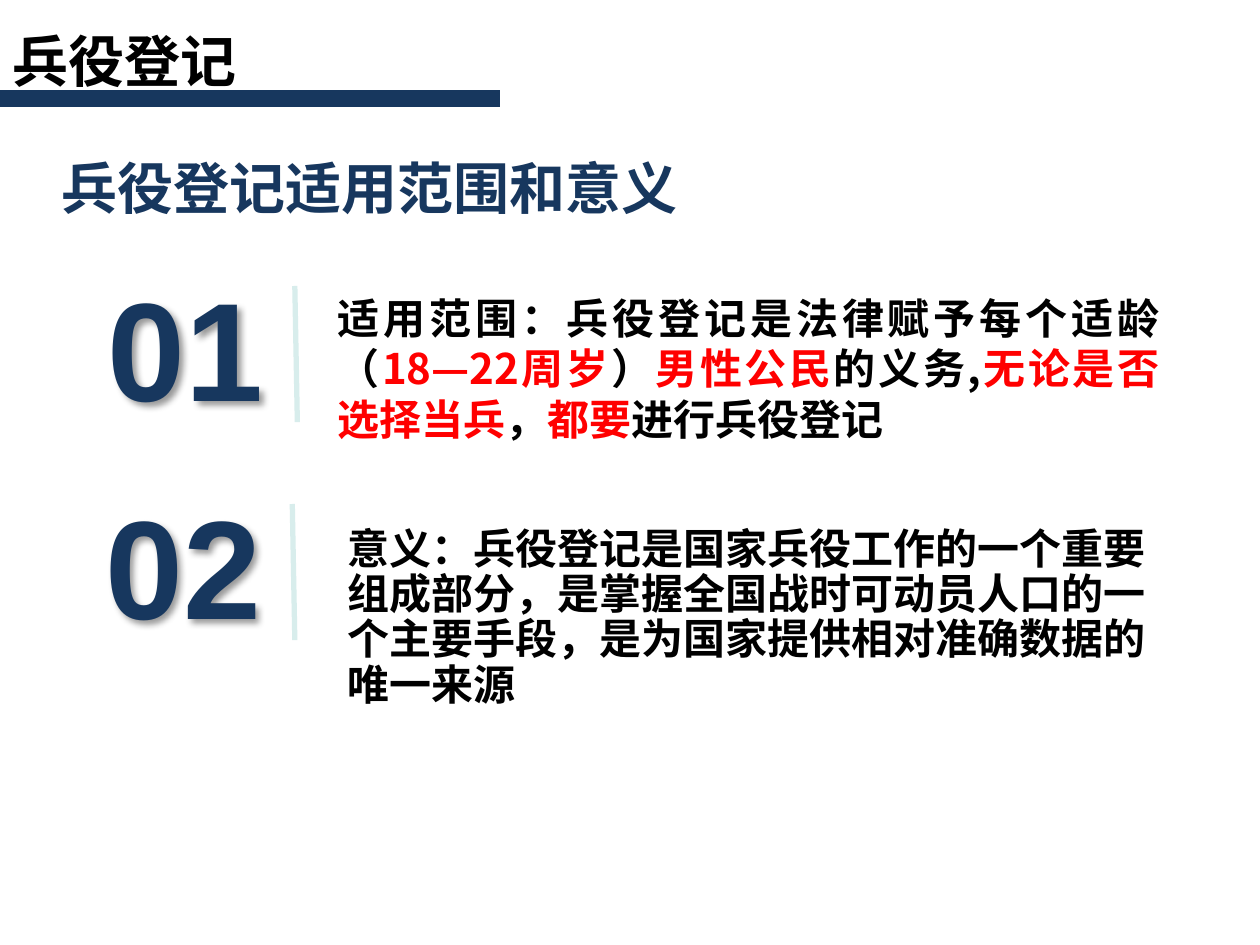
from lxml import etree
from pptx import Presentation
from pptx import util as u
from pptx.dml.color import RGBColor
from pptx.enum import shapes, text
from pptx.oxml import ns

WIDTH, HEIGHT = u.Inches(10), u.Inches(7.5)
NAVY = RGBColor(0x17, 0x37, 0x5E)
MINT = RGBColor(0xD8, 0xED, 0xEC)
BLACK = RGBColor(0, 0, 0)
RED = RGBColor(0xFF, 0, 0)
CHINESE_FONT = "Noto Sans CJK SC"
NUMBER_FONT = "Arial"

SCOPE_RUNS = [
    ("适用范围：兵役登记是法律赋予每个适龄（", BLACK),
    ("18—22周岁", RED),
    ("）", BLACK),
    ("男性公民", RED),
    ("的义务,", BLACK),
    ("无论是否选择当兵", RED),
    ("，", BLACK),
    ("都要", RED),
    ("进行兵役登记", BLACK),
]
MEANING_RUNS = [
    ("意义：兵役登记是国家兵役工作的一个重要组成部分，"
     "是掌握全国战时可动员人口的一个主要手段，"
     "是为国家提供相对准确数据的唯一来源", BLACK),
]


def add_run(paragraph, content, size, color, font_name):
    run = paragraph.add_run()
    run.text = content
    font = run.font
    font.size, font.bold, font.name = u.Pt(size), True, font_name
    font.color.rgb = color
    latin = run._r.rPr.find(ns.qn("a:latin"))
    east_asian = etree.Element(ns.qn("a:ea"), typeface=font_name)
    latin.addnext(east_asian)


def write_text(shape, runs, size, font_name=CHINESE_FONT, wrap=True,
               align=text.PP_ALIGN.LEFT, spacing=None):
    frame = shape.text_frame
    frame.word_wrap = wrap
    frame.auto_size = text.MSO_AUTO_SIZE.SHAPE_TO_FIT_TEXT
    frame.vertical_anchor = text.MSO_ANCHOR.TOP
    paragraph = frame.paragraphs[0]
    paragraph.alignment = align
    if spacing is not None:
        paragraph.line_spacing = spacing
    for content, color in runs:
        add_run(paragraph, content, size, color, font_name)


def add_text(slide, left, top, width, height, runs, size, **style):
    box = slide.shapes.add_textbox(
        *(u.Inches(length) for length in (left, top, width, height)))
    write_text(box, runs, size, **style)
    return box


def add_title(slide, content):
    title = slide.shapes.title
    title.left, title.top = 0, u.Inches(0.16)
    title.width, title.height = u.Inches(7.34), u.Inches(0.64)
    write_text(title, [(content, BLACK)], 32)


def add_line(slide, start, end, color, weight):
    line = slide.shapes.add_connector(
        shapes.MSO_CONNECTOR.STRAIGHT,
        *(u.Inches(length) for length in (*start, *end)))
    line.line.color.rgb = color
    line.line.width = u.Pt(weight)
    etree.SubElement(line._element.spPr, ns.qn("a:effectLst"))


def add_shadow(shape):
    effects = etree.SubElement(shape._element.spPr, ns.qn("a:effectLst"))
    shadow = etree.SubElement(
        effects, ns.qn("a:outerShdw"), blurRad=str(u.Pt(4)), dist=str(u.Pt(3)),
        dir="2700000", algn="tl", rotWithShape="0")
    black = etree.SubElement(shadow, ns.qn("a:srgbClr"), val="000000")
    etree.SubElement(black, ns.qn("a:alpha"), val="40000")


def add_number(slide, left, top, number):
    box = add_text(slide, left, top, 1.94, 1.22, [(number, NAVY)], 80,
                   font_name=NUMBER_FONT, align=text.PP_ALIGN.RIGHT,
                   spacing=u.Pt(80))
    add_shadow(box)
    add_line(slide, (left + 2.09, top + 0.02), (left + 2.11, top + 1.1), MINT, 3)


def main():
    presentation = Presentation()
    presentation.slide_width, presentation.slide_height = WIDTH, HEIGHT
    slide = presentation.slides.add_slide(presentation.slide_layouts[5])
    add_title(slide, "兵役登记")
    add_line(slide, (0, 0.78), (3.97, 0.78), NAVY, 10)
    add_text(slide, 0.39, 1.17, 5.14, 0.64,
             [("兵役登记适用范围和意义", NAVY)], 32, wrap=False)
    add_text(slide, 2.58, 2.27, 6.72, 1.31, SCOPE_RUNS, 24,
             align=text.PP_ALIGN.JUSTIFY)
    add_text(slide, 2.66, 4.14, 6.72, 1.56, MEANING_RUNS, 24, spacing=0.9)
    add_number(slide, 0.25, 2.25, "01")
    add_number(slide, 0.23, 3.98, "02")
    presentation.save("out.pptx")


if __name__ == "__main__":
    main()
